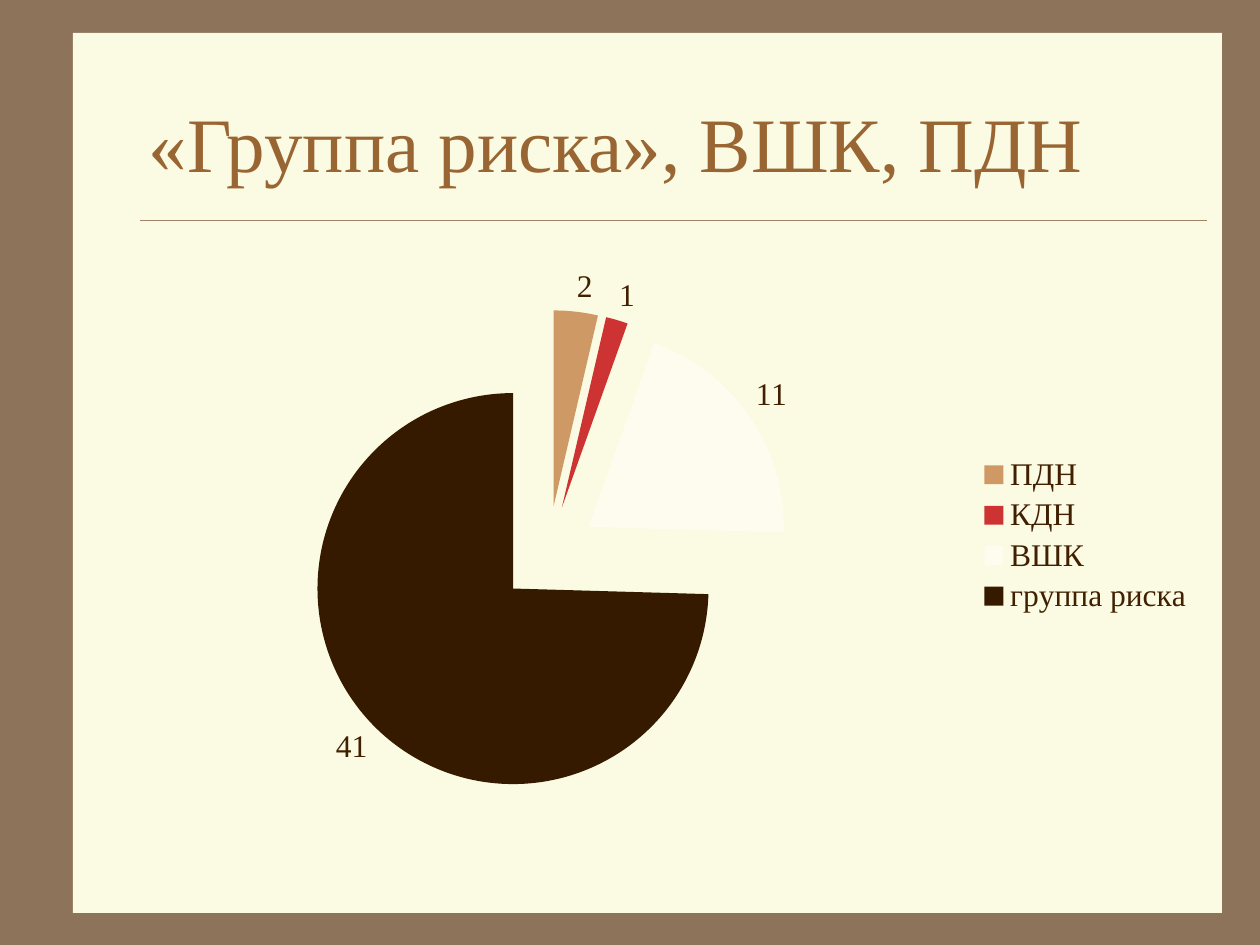
from lxml import etree
from pptx import Presentation
from pptx.chart.data import CategoryChartData as Data
from pptx.dml.color import RGBColor as RGB
from pptx.enum.chart import XL_CHART_TYPE as Kind
from pptx.enum.chart import XL_LABEL_POSITION as Spot
from pptx.enum.chart import XL_LEGEND_POSITION as Side
from pptx.enum.shapes import MSO_CONNECTOR as Link
from pptx.enum.shapes import MSO_SHAPE as Form
from pptx.enum.text import MSO_ANCHOR as Anchor
from pptx.enum.text import MSO_AUTO_SIZE as Fit
from pptx.enum.text import PP_ALIGN as Align
from pptx.oxml.ns import qn
from pptx.util import Inches, Pt

PX = Inches(1) / 126
FACE = "Times New Roman"
FRAME = RGB(0x8C, 0x73, 0x5A)
CREAM = RGB(0xFB, 0xFA, 0xE2)
RULE = RGB(0xA0, 0x83, 0x66)
BROWN = RGB(0x99, 0x66, 0x33)
DARK = RGB(0x40, 0x20, 0x00)
PARTS = {
    "ПДН": (2, RGB(0xCE, 0x99, 0x64)),
    "КДН": (1, RGB(0xCD, 0x33, 0x33)),
    "ВШК": (11, RGB(0xFD, 0xFC, 0xEE)),
    "группа риска": (41, RGB(0x35, 0x1A, 0x00)),
}


def emu(*sizes):
    return [round(size * PX) for size in sizes]


def style(font, size, color):
    for key, value in {"name": FACE, "size": Pt(size), "bold": False}.items():
        setattr(font, key, value)
    font.color.rgb = color


def add_page(slide, box):
    """Draw the cream page and the rule under its heading."""
    left, top, width, height = box
    page = slide.shapes.add_shape(Form.RECTANGLE, *emu(*box))
    page.shadow.inherit = False
    page.fill.solid()
    page.fill.fore_color.rgb = CREAM
    page.line.fill.background()

    level = top + 187
    ends = emu(left + 67, level, left + width - 15, level)
    rule = slide.shapes.add_connector(Link.STRAIGHT, *ends)
    rule.line.color.rgb = RULE
    rule.line.width = Pt(0.25)
    etree.SubElement(rule._element.spPr, qn("a:effectLst"))


def set_title(slide, box, text):
    title = slide.shapes.title
    title.left, title.top, title.width, title.height = emu(*box)
    frame = title.text_frame
    frame.text = text
    looks = {"vertical_anchor": Anchor.MIDDLE, "word_wrap": True,
             "auto_size": Fit.NONE}
    for key, value in looks.items():
        setattr(frame, key, value)
    para = frame.paragraphs[0]
    para.alignment = Align.LEFT
    style(para.runs[0].font, 44, BROWN)


def add_pie(slide, box):
    data = Data()
    data.categories = list(PARTS)
    data.add_series("Series 1", [count for count, _ in PARTS.values()])
    chart = slide.shapes.add_chart(Kind.PIE, *emu(*box), data).chart
    chart.has_title = False
    style(chart.font, 18, DARK)
    chart.has_legend = True
    chart.legend.position = Side.RIGHT
    chart.legend.include_in_layout = False

    plot = chart.plots[0]
    plot.vary_by_categories = True
    plot.has_data_labels = True
    labels = plot.data_labels
    labels.show_value = True
    labels.show_percentage = False
    labels.position = Spot.OUTSIDE_END

    row = plot.series[0]
    burst = etree.Element(qn("c:explosion"), val="25")
    row._element.find(qn("c:tx")).addnext(burst)
    for spot, (_, color) in enumerate(PARTS.values()):
        look = row.points[spot].format
        look.fill.solid()
        look.fill.fore_color.rgb = color
        look.line.fill.background()


def main():
    deck = Presentation()
    deck.slide_width, deck.slide_height = Inches(10), Inches(7.5)
    slide = deck.slides.add_slide(deck.slide_layouts[5])
    slide.background.fill.solid()
    slide.background.fill.fore_color.rgb = FRAME
    add_page(slide, (73, 33, 1149, 880))
    set_title(slide, (136, 63, 1071, 158), "«Группа риска», ВШК, ПДН")
    # The page is drawn after the title placeholder, so lift the title above it.
    slide.shapes._spTree.append(slide.shapes.title._element)
    add_pie(slide, (136, 252, 1071, 567))
    deck.save("out.pptx")


if __name__ == "__main__":
    main()
